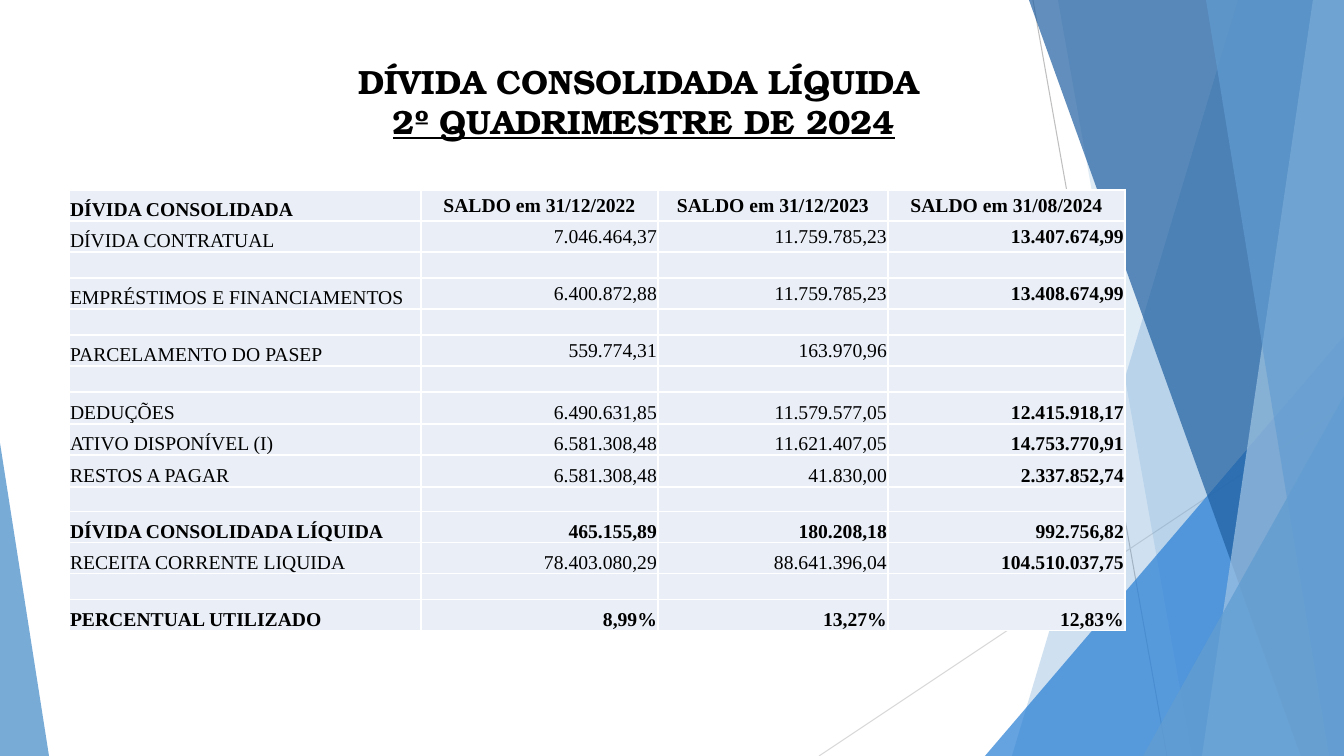
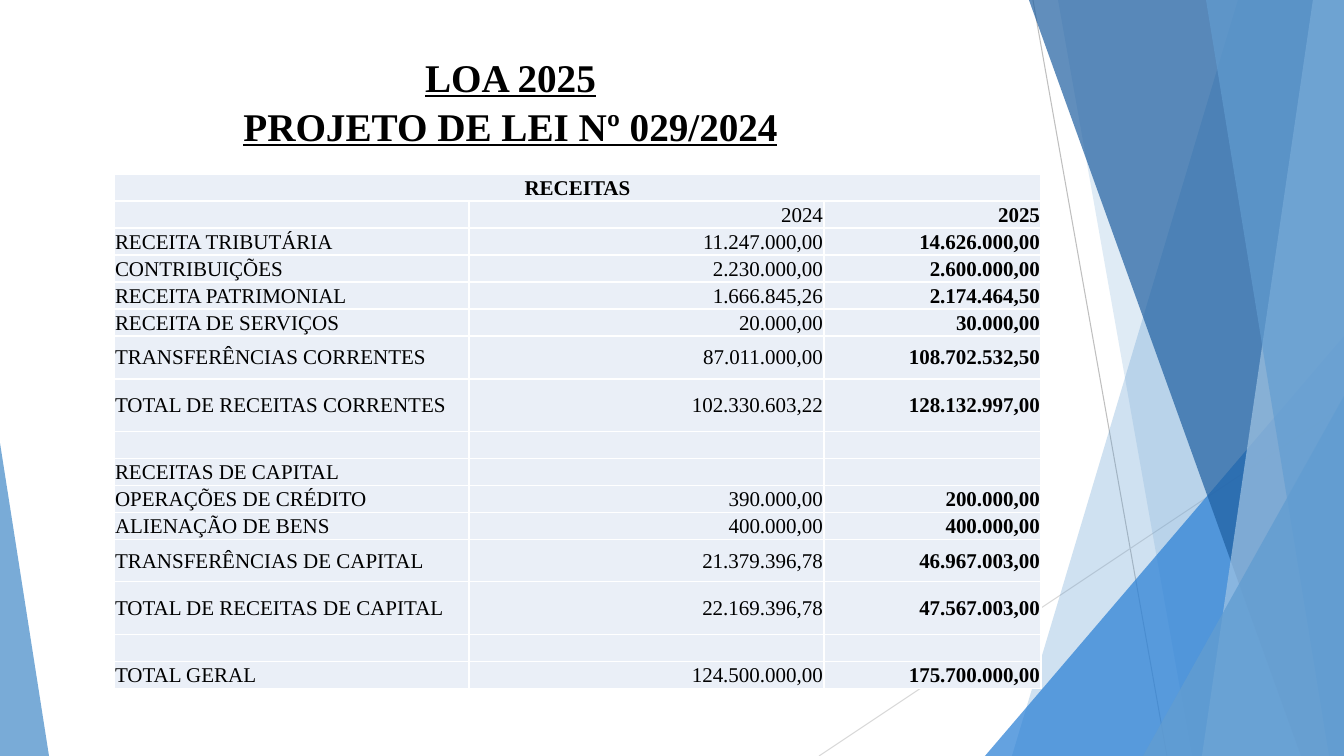
from lxml.etree import SubElement
from pptx import Presentation
from pptx.dml.color import RGBColor
from pptx.enum.shapes import MSO_CONNECTOR, MSO_SHAPE
from pptx.enum.text import MSO_ANCHOR, MSO_AUTO_SIZE, PP_ALIGN
from pptx.oxml.ns import qn
from pptx.util import Pt

SLIDE_WIDTH, SLIDE_HEIGHT = 1344, 756
EMU_PER_PX = 12192000 / SLIDE_WIDTH

SERIF = "Times New Roman"
DISPLAY = "TeX Gyre Bonum"
BLACK, WHITE = "000000", "FFFFFF"
CELL_FILL = "EAEFF7"
SKY, AZURE, NAVY, PALE = "629DD1", "297FD5", "1F5FA0", "A1C4E3"
GREY, LIGHT_GREY = "BFBFBF", "D9D9D9"

DEBT_ROWS = [
    (31, "DÍVIDA CONSOLIDADA", "SALDO em 31/12/2022", "SALDO em 31/12/2023", "SALDO em 31/08/2024"),
    (31, "DÍVIDA CONTRATUAL", "7.046.464,37", "11.759.785,23", "13.407.674,99"),
    (26,),
    (31, "EMPRÉSTIMOS E FINANCIAMENTOS", "6.400.872,88", "11.759.785,23", "13.408.674,99"),
    (26,),
    (31, "PARCELAMENTO DO PASEP", "559.774,31", "163.970,96", ""),
    (26,),
    (32, "DEDUÇÕES", "6.490.631,85", "11.579.577,05", "12.415.918,17"),
    (31, "ATIVO DISPONÍVEL (I)", "6.581.308,48", "11.621.407,05", "14.753.770,91"),
    (32, "RESTOS A PAGAR", "6.581.308,48", "41.830,00", "2.337.852,74"),
    (23,),
    (31, "DÍVIDA CONSOLIDADA LÍQUIDA", "465.155,89", "180.208,18", "992.756,82"),
    (31, "RECEITA CORRENTE LIQUIDA", "78.403.080,29", "88.641.396,04", "104.510.037,75"),
    (26,),
    (31, "PERCENTUAL UTILIZADO", "8,99%", "13,27%", "12,83%"),
]

REVENUE_ROWS = [
    (27, "RECEITAS"),
    (27, "", "2024", "2025"),
    (27, "RECEITA TRIBUTÁRIA", "11.247.000,00", "14.626.000,00"),
    (27, "CONTRIBUIÇÕES", "2.230.000,00", "2.600.000,00"),
    (27, "RECEITA PATRIMONIAL", "1.666.845,26", "2.174.464,50"),
    (27, "RECEITA DE SERVIÇOS", "20.000,00", "30.000,00"),
    (43, "TRANSFERÊNCIAS CORRENTES", "87.011.000,00", "108.702.532,50"),
    (53, "TOTAL DE RECEITAS CORRENTES", "102.330.603,22", "128.132.997,00"),
    (27,),
    (27, "RECEITAS DE CAPITAL", "", ""),
    (27, "OPERAÇÕES DE CRÉDITO", "390.000,00", "200.000,00"),
    (27, "ALIENAÇÃO DE BENS", "400.000,00", "400.000,00"),
    (42, "TRANSFERÊNCIAS DE CAPITAL", "21.379.396,78", "46.967.003,00"),
    (53, "TOTAL DE RECEITAS DE CAPITAL", "22.169.396,78", "47.567.003,00"),
    (27,),
    (27, "TOTAL GERAL", "124.500.000,00", "175.700.000,00"),
]


def px(length):
    return round(length * EMU_PER_PX)


def color(hex_string):
    return RGBColor.from_string(hex_string)


def put_text(frame, text, size=14, font=SERIF, bold=False, underline=False,
             align=PP_ALIGN.LEFT, line_spacing=None):
    """Write one paragraph per line of text."""
    for index, line in enumerate(text.split("\n")):
        paragraph = frame.add_paragraph() if index else frame.paragraphs[0]
        paragraph.alignment = align
        paragraph.line_spacing = line_spacing
        if not line:
            SubElement(paragraph._p, qn("a:endParaRPr"), sz=str(size * 100))
            continue
        run = paragraph.add_run()
        run.text = line
        run.font.size = Pt(size)
        run.font.name = font
        run.font.bold = bold
        run.font.underline = underline
        run.font.color.rgb = color(BLACK)


def paint(shape, fill, opacity):
    """Give a shape a see-through fill with no outline or shadow."""
    shape.shadow.inherit = False
    shape.fill.solid()
    shape.fill.fore_color.rgb = color(fill)
    fill_color = shape.element.find(".//" + qn("a:srgbClr"))
    SubElement(fill_color, qn("a:alpha"), val=str(opacity * 1000))
    shape.line.fill.background()


def add_ray(shapes, start, end, line_color):
    ray = shapes.add_connector(MSO_CONNECTOR.STRAIGHT, *map(px, start + end))
    ray.line.color.rgb = color(line_color)
    ray.line.width = Pt(0.75)
    SubElement(ray.element.spPr, qn("a:effectLst"))


def add_shard(shapes, top_left, bottom_left, fill, opacity):
    """Add a full-height panel that ends at the right edge of the slide."""
    outline = shapes.build_freeform(top_left, 0, scale=EMU_PER_PX)
    outline.add_line_segments([(SLIDE_WIDTH, 0), (SLIDE_WIDTH, SLIDE_HEIGHT),
                               (bottom_left, SLIDE_HEIGHT)], close=True)
    paint(outline.convert_to_shape(), fill, opacity)


def add_corner(shapes, left, top, width, apex, fill, opacity):
    """Add a triangle that stands on the bottom edge of the slide."""
    corner = shapes.add_shape(MSO_SHAPE.ISOSCELES_TRIANGLE, px(left), px(top),
                              px(width), px(SLIDE_HEIGHT - top))
    corner.adjustments[0] = apex
    paint(corner, fill, opacity)


def decorate_master(master, slide):
    """Draw the backdrop on a slide, then move it to the master."""
    shapes = slide.shapes
    kept = len(shapes)
    add_ray(shapes, (1033, 0), (1167, SLIDE_HEIGHT), GREY)
    add_ray(shapes, (SLIDE_WIDTH, 406), (819, SLIDE_HEIGHT), LIGHT_GREY)
    add_shard(shapes, 1238, 1012, SKY, 30)
    add_shard(shapes, 1058, 1192, SKY, 20)
    add_corner(shapes, 985, 336, 359, 1, AZURE, 72)
    add_shard(shapes, 1029, 1301, NAVY, 70)
    add_shard(shapes, 1313, 1202, PALE, 70)
    add_shard(shapes, 1206, 1329, SKY, 65)
    add_corner(shapes, 1143, 396, 201, 1, SKY, 80)
    add_corner(shapes, 0, 443, 49, 0, SKY, 85)
    for number, part in enumerate(list(shapes)[kept:], start=100):
        part.element.find(".//" + qn("p:cNvPr")).set("id", str(number))
        master.shapes.element.append(part.element)


def set_title(slide, text, box, **text_format):
    title = slide.shapes.title
    title.left, title.top, title.width, title.height = map(px, box)
    frame = title.text_frame
    frame.word_wrap = True
    frame.auto_size = MSO_AUTO_SIZE.NONE
    frame.vertical_anchor = MSO_ANCHOR.TOP
    put_text(frame, text, bold=True, align=PP_ALIGN.CENTER, **text_format)
    return frame


def style_cell(cell, anchor):
    cell.margin_left = cell.margin_right = cell.margin_top = px(1)
    cell.margin_bottom = 0
    cell.vertical_anchor = anchor
    properties = cell._tc.get_or_add_tcPr()
    for side in ("lnL", "lnR", "lnT", "lnB"):
        border = SubElement(properties, qn(f"a:{side}"), w=str(Pt(1)))
        border_fill = SubElement(border, qn("a:solidFill"))
        SubElement(border_fill, qn("a:srgbClr"), val=WHITE)
    cell.fill.solid()
    cell.fill.fore_color.rgb = color(CELL_FILL)


def add_balance_table(slide, left, top, widths, rows, size, bold_rows=(0,),
                      is_bottom=lambda row, column: False):
    """Each row is a height and its texts; a lone text spans the row."""
    heights = [height for height, *_ in rows]
    table = slide.shapes.add_table(len(rows), len(widths), px(left), px(top),
                                   px(sum(widths)), px(sum(heights))).table
    table.first_row = table.horz_banding = False
    for column, width in zip(table.columns, widths):
        column.width = px(width)
    last = len(widths) - 1
    for r, (height, *texts) in enumerate(rows):
        table.rows[r].height = px(height)
        spans_row = len(texts) == 1
        if spans_row:
            table.cell(r, 0).merge(table.cell(r, last))
        texts += [""] * (len(widths) - len(texts))
        for c, text in enumerate(texts):
            cell = table.cell(r, c)
            style_cell(cell, MSO_ANCHOR.BOTTOM if is_bottom(r, c) else MSO_ANCHOR.MIDDLE)
            if spans_row or (r == 0 and c > 0):
                align = PP_ALIGN.CENTER
            else:
                align = PP_ALIGN.RIGHT if c else PP_ALIGN.LEFT
            put_text(cell.text_frame, text, size=size, align=align,
                     bold=r in bold_rows or c == last)


def main():
    deck = Presentation()
    deck.slide_width, deck.slide_height = px(SLIDE_WIDTH), px(SLIDE_HEIGHT)
    title_only = deck.slide_layouts[5]

    debt = deck.slides.add_slide(title_only)
    decorate_master(deck.slide_master, debt)
    heading = set_title(debt, "DÍVIDA CONSOLIDADA LÍQUIDA \n2º QUADRIMESTRE DE 2024",
                        (176, 56, 936, 108), size=24, font=DISPLAY)
    heading.paragraphs[1].runs[0].font.underline = True
    add_balance_table(debt, 69, 190, [352, 237, 230, 237], DEBT_ROWS, size=14,
                      bold_rows=(0, 11, 14),
                      is_bottom=lambda row, column: column == 0 or row >= 7)

    budget = deck.slides.add_slide(title_only)
    set_title(budget, "LOA 2025\nPROJETO DE LEI Nº 029/2024", (124, 46, 773, 127),
              size=28, underline=True, line_spacing=1.04)
    add_balance_table(budget, 114, 174, [355, 355, 217], REVENUE_ROWS, size=15)

    deck.save("out.pptx")


if __name__ == "__main__":
    main()
